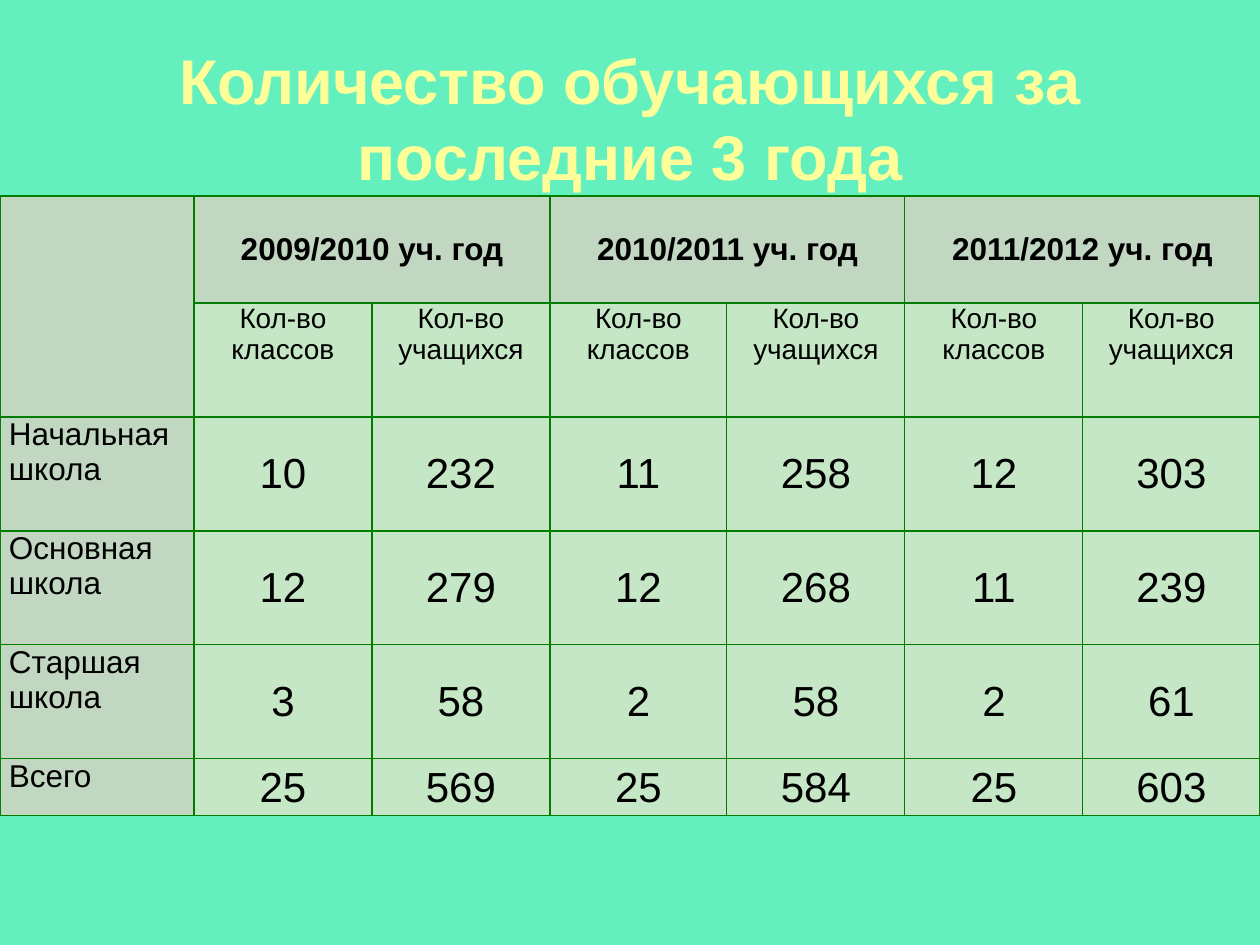
"""Build a slide with a table of pupil numbers over three school years."""
from lxml import etree
from pptx import Presentation
from pptx import util as u
from pptx.dml.color import RGBColor
from pptx.enum import text
from pptx.oxml import ns

TITLE = "Количество обучающихся за последние 3 года"
YEARS = ["2009/2010 уч. год", "2010/2011 уч. год", "2011/2012 уч. год"]
COUNTS = ["Кол-во классов", "Кол-во учащихся"]
SCHOOLS = [
    ("Начальная школа", 10, 232, 11, 258, 12, 303),
    ("Основная школа", 12, 279, 12, 268, 11, 239),
    ("Старшая школа", 3, 58, 2, 58, 2, 61),
    ("Всего", 25, 569, 25, 584, 25, 603),
]
COLS = [194] + [178, 178, 177] * 2
ROWS = [107, 114, 114, 114, 114, 57]

PX = u.Inches(1) // 126
FONT = "Arial"
MINT = RGBColor(0x64, 0xF0, 0xBE)
YELLOW = RGBColor(0xFF, 0xFF, 0x99)
BLACK = RGBColor(0, 0, 0)
HEAD = RGBColor(0xC1, 0xD7, 0xC1)
BODY = RGBColor(0xC5, 0xE7, 0xC5)
GREEN = RGBColor(0x00, 0x7D, 0x00)
CENTER, LEFT = text.PP_ALIGN.CENTER, text.PP_ALIGN.LEFT
MIDDLE, TOP = text.MSO_ANCHOR.MIDDLE, text.MSO_ANCHOR.TOP


def write(tf, words, size=24, color=BLACK, bold=False, align=CENTER, anchor=MIDDLE):
    tf.word_wrap = True
    tf.vertical_anchor = anchor
    p = tf.paragraphs[0]
    p.alignment = align
    r = p.add_run()
    r.text = str(words)
    r.font.name, r.font.size, r.font.bold = FONT, u.Pt(size), bold
    r.font.color.rgb = color


def frame_cell(cell, fill):
    cell.fill.solid()
    cell.fill.fore_color.rgb = fill
    cell.margin_left = cell.margin_right = 9 * PX
    cell.margin_top = cell.margin_bottom = 0
    tc_pr = cell.fill._xPr
    for i, side in enumerate(("lnL", "lnR", "lnT", "lnB")):
        ln = etree.Element(ns.qn(f"a:{side}"), w=str(u.Pt(0.75)))
        solid = etree.SubElement(ln, ns.qn("a:solidFill"))
        etree.SubElement(solid, ns.qn("a:srgbClr"), val=str(GREEN))
        tc_pr.insert(i, ln)


def main():
    prs = Presentation()
    prs.slide_width, prs.slide_height = 1260 * PX, 945 * PX
    s = prs.slides.add_slide(prs.slide_layouts[6])
    s.background.fill.solid()
    s.background.fill.fore_color.rgb = MINT

    box = s.shapes.add_textbox(63 * PX, 38 * PX, 1134 * PX, 158 * PX)
    write(box.text_frame, TITLE, size=36, color=YELLOW, bold=True)

    table = s.shapes.add_table(len(ROWS), len(COLS), 0, 196 * PX,
                               sum(COLS) * PX, sum(ROWS) * PX).table
    table.first_row = table.horz_banding = False
    for col, width in zip(table.columns, COLS):
        col.width = width * PX
    for row, height in zip(table.rows, ROWS):
        row.height = height * PX
    for i in range(len(ROWS)):
        for j in range(len(COLS)):
            frame_cell(table.cell(i, j), HEAD if i == 0 or j == 0 else BODY)

    table.cell(0, 0).merge(table.cell(1, 0))
    for k, year in enumerate(YEARS):
        j = 1 + k * len(COUNTS)
        cell = table.cell(0, j)
        cell.merge(table.cell(0, j + 1))
        cell.vertical_anchor = MIDDLE
        write(cell.text_frame, year, size=18, bold=True)
        for n, count in enumerate(COUNTS):
            write(table.cell(1, j + n).text_frame, count, size=16, anchor=TOP)
    for i, (school, *values) in enumerate(SCHOOLS, 2):
        write(table.cell(i, 0).text_frame, school, size=18, align=LEFT, anchor=TOP)
        for j, value in enumerate(values, 1):
            cell = table.cell(i, j)
            cell.vertical_anchor = MIDDLE
            write(cell.text_frame, value)

    prs.save("out.pptx")


if __name__ == "__main__":
    main()
